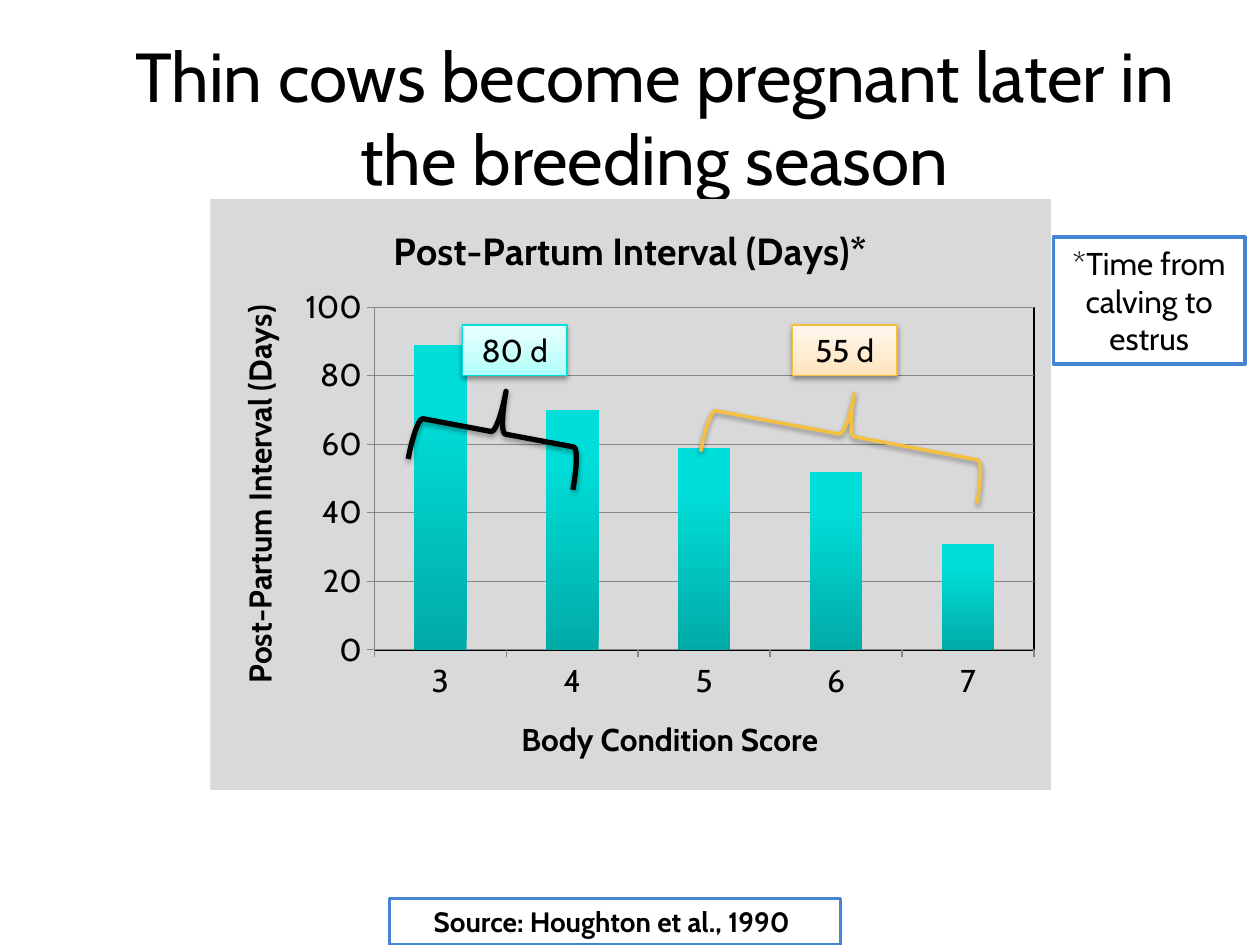
from lxml import etree
from pptx import Presentation
from pptx.chart.data import CategoryChartData
from pptx.dml.color import RGBColor
from pptx.enum.chart import XL_CHART_TYPE, XL_TICK_MARK
from pptx.enum.shapes import MSO_SHAPE
from pptx.enum.text import MSO_ANCHOR, PP_ALIGN
from pptx.oxml import parse_xml
from pptx.oxml.ns import nsdecls, qn
from pptx.util import Inches, Pt

COLUMN = XL_CHART_TYPE.COLUMN_CLUSTERED
TICK_OUT = XL_TICK_MARK.OUTSIDE
RECT = MSO_SHAPE.RECTANGLE
BRACE = MSO_SHAPE.RIGHT_BRACE
CENTER = PP_ALIGN.CENTER
MIDDLE = MSO_ANCHOR.MIDDLE
FONT = "Cabin"
BLACK, WHITE, BLUE, GREY = "000000", "FFFFFF", "4584D3", "868686"
TEAL_BARS = [(0, "00ABA7"), (80, "00DED9"), (100, "00DFDA")]
TEAL_LABEL = [(0, "AEFFFB"), (35, "C6FFFC"), (100, "E9FFFE")]
AMBER_LABEL = [(0, "FFE3BB"), (35, "FFEBCF"), (100, "FFF7ED")]


def rgb(value):
    return RGBColor.from_string(value)


def box_of(box):
    return [Inches(v) for v in box]


def set_font(font, size, bold=False):
    font.name = FONT
    font.size = Pt(size)
    font.bold = bold
    font.color.rgb = rgb(BLACK)


def set_line(line, color, width):
    line.color.rgb = rgb(color)
    line.width = Pt(width)


def set_solid(fill, color):
    fill.solid()
    fill.fore_color.rgb = rgb(color)


def set_gradient(fill, element, stops):
    fill.gradient()
    fill.gradient_angle = 90
    stop_list = next(element.iter(qn("a:gsLst")))
    for old in list(stop_list):
        stop_list.remove(old)
    for position, color in stops:
        stop = etree.SubElement(stop_list, qn("a:gs"), pos=str(position * 1000))
        etree.SubElement(stop, qn("a:srgbClr"), val=color)


def add_shadow(shape, alpha, distance):
    effects = next(shape._element.iter(qn("a:effectLst")))
    shadow = etree.SubElement(
        effects, qn("a:outerShdw"), blurRad=str(Pt(3.1)), dist=str(Pt(distance)),
        dir="5400000", rotWithShape="0")
    color = etree.SubElement(shadow, qn("a:srgbClr"), val=BLACK)
    etree.SubElement(color, qn("a:alpha"), val=str(alpha * 1000))


def add_title(s, box, text):
    title = s.shapes.title
    title.left, title.top, title.width, title.height = box_of(box)
    tf = title.text_frame
    tf.text = text
    tf.vertical_anchor = MIDDLE
    p = tf.paragraphs[0]
    p.alignment = CENTER
    set_font(p.font, 39.6)


def add_box(s, box, text, size, line, width, bold=False, stops=None):
    sp = s.shapes.add_shape(RECT, *box_of(box))
    if stops:
        set_gradient(sp.fill, sp._element, stops)
    else:
        set_solid(sp.fill, WHITE)
    set_line(sp.line, line, width)
    sp.shadow.inherit = False
    tf = sp.text_frame
    tf.word_wrap = True
    tf.vertical_anchor = MIDDLE
    p = tf.paragraphs[0]
    p.text = text
    p.alignment = CENTER
    set_font(p.font, size, bold)
    return sp


def add_group_label(s, box, text, line, stops):
    add_shadow(add_box(s, box, text, 18, line, 0.75, stops=stops), 38, 1.6)


def add_brace(s, box, color, width, alpha, distance):
    sp = s.shapes.add_shape(BRACE, *box_of(box))
    sp.rotation = 280.6
    sp.fill.background()
    set_line(sp.line, color, width)
    sp.shadow.inherit = False
    add_shadow(sp, alpha, distance)


def set_chart_title(owner, text, size):
    tf = (owner.chart_title if hasattr(owner, "chart_title") else owner.axis_title).text_frame
    tf.text = text
    set_font(tf.paragraphs[0].font, size, True)


def style_plot_area(chart):
    chart_space = chart._chartSpace
    background = parse_xml(
        f'<c:spPr {nsdecls("c", "a")}><a:solidFill><a:srgbClr val="D9D9D9"/></a:solidFill>'
        '<a:ln><a:noFill/></a:ln></c:spPr>')
    chart_space.find(qn("c:chart")).addnext(background)
    area = next(chart_space.iter(qn("c:plotArea")))
    for old in area.findall(qn("c:layout")):
        area.remove(old)
    area.insert(0, parse_xml(
        f'<c:layout {nsdecls("c")}><c:manualLayout><c:layoutTarget val="inner"/>'
        '<c:xMode val="edge"/><c:yMode val="edge"/><c:x val="0.195"/><c:y val="0.183"/>'
        '<c:w val="0.785"/><c:h val="0.58"/></c:manualLayout></c:layout>'))
    area.append(parse_xml(
        f'<c:spPr {nsdecls("c", "a")}><a:noFill/><a:ln w="9525"><a:solidFill>'
        f'<a:srgbClr val="{BLACK}"/></a:solidFill></a:ln></c:spPr>'))


def add_interval_chart(s, box):
    data = CategoryChartData()
    data.categories = ["3", "4", "5", "6", "7"]
    data.add_series("Series 1", [89, 70, 59, 52, 31])
    chart = s.shapes.add_chart(COLUMN, *box_of(box), data).chart
    set_font(chart.font, 18)
    chart.has_legend = False
    chart.has_title = True
    set_chart_title(chart, "Post-Partum Interval (Days)*", 21.6)
    set_chart_title(chart.category_axis, "Body Condition Score", 18)
    set_chart_title(chart.value_axis, "Post-Partum Interval (Days)", 18)
    for axis in (chart.category_axis, chart.value_axis):
        axis.major_tick_mark = TICK_OUT
        set_line(axis.format.line, GREY, 0.75)
    values = chart.value_axis
    values.minimum_scale, values.maximum_scale, values.major_unit = 0, 100, 20
    values.has_major_gridlines = True
    set_line(values.major_gridlines.format.line, GREY, 0.75)
    plot = chart.plots[0]
    plot.gap_width = 150
    plot.vary_by_categories = False
    series = plot.series[0]
    set_gradient(series.format.fill, series._element, TEAL_BARS)
    style_plot_area(chart)


def main():
    prs = Presentation()
    prs.slide_width, prs.slide_height = Inches(10), Inches(7.5)
    s = prs.slides.add_slide(prs.slide_layouts[5])
    add_title(s, (0.89, 0.3, 8.61, 1.25),
              "Thin cows become pregnant later in the breeding season")
    add_interval_chart(s, (1.67, 1.58, 6.67, 4.69))
    add_box(s, (3.09, 7.13, 3.58, 0.37), "Source: Houghton et al., 1990 ", 16, BLUE, 2, True)
    add_box(s, (8.36, 1.88, 1.52, 1.01), "*Time from calving to estrus", 18, BLUE, 2)
    add_group_label(s, (3.67, 2.58, 0.83, 0.4), "80 d", "00E0DB", TEAL_LABEL)
    add_group_label(s, (6.29, 2.58, 0.83, 0.4), "55 d", "F4BE3A", AMBER_LABEL)
    add_brace(s, (3.62, 2.77, 0.67, 1.33), BLACK, 3, 35, 1.8)
    add_brace(s, (6.38, 2.34, 0.68, 2.23), "F5C040", 2, 38, 1.6)
    prs.save("out.pptx")


if __name__ == "__main__":
    main()
